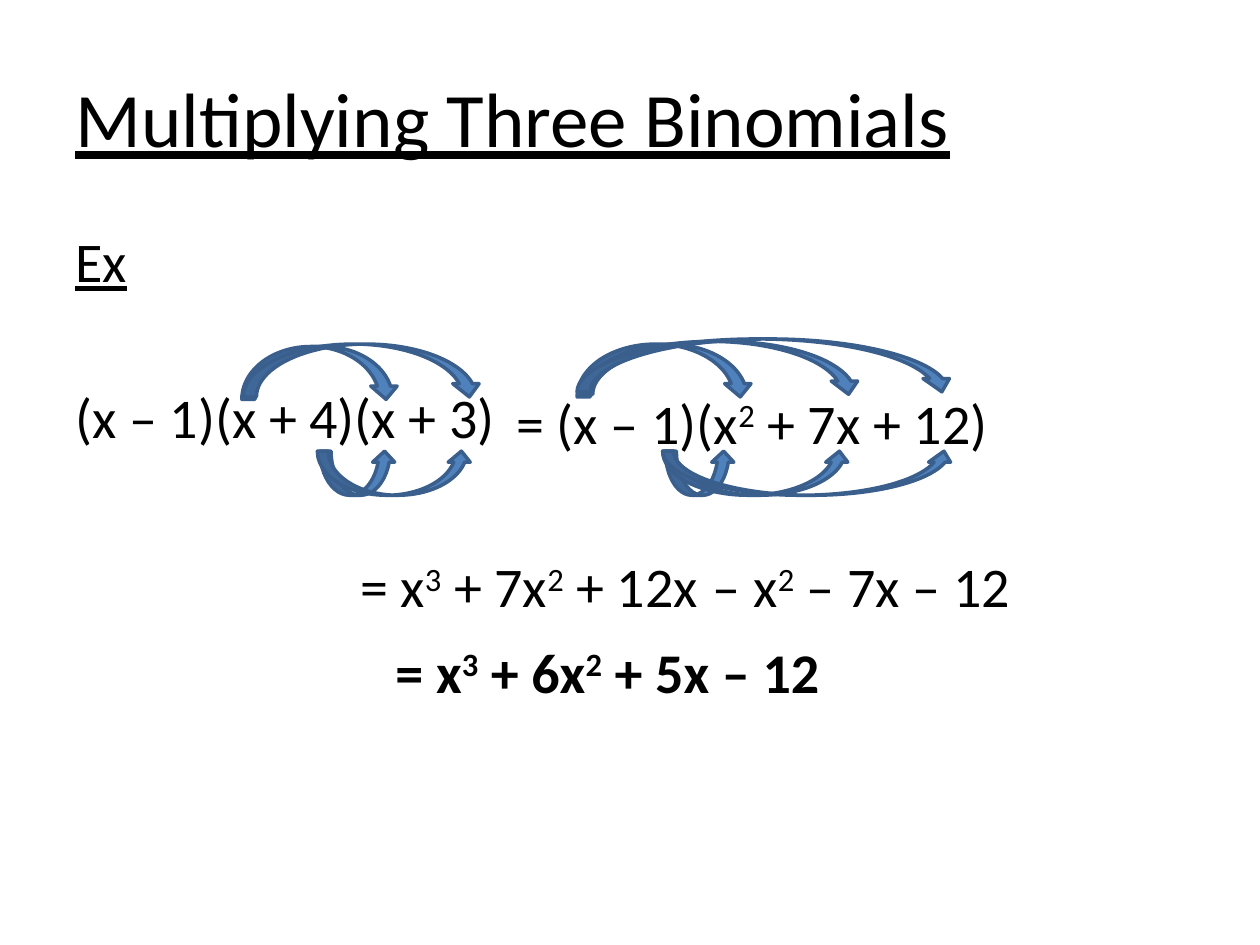
from dataclasses import dataclass

from pptx import Presentation
from pptx.dml.color import RGBColor
from pptx.enum.shapes import MSO_SHAPE
from pptx.enum.text import MSO_ANCHOR, MSO_AUTO_SIZE
from pptx.util import Pt

DOWN, UP = MSO_SHAPE.CURVED_DOWN_ARROW, MSO_SHAPE.CURVED_UP_ARROW
MIDDLE, FIT, FIXED = MSO_ANCHOR.MIDDLE, MSO_AUTO_SIZE.SHAPE_TO_FIT_TEXT, MSO_AUTO_SIZE.NONE


@dataclass(frozen=True)
class Theme:
    font: str = "Calibri"
    title: int = 44
    body: int = 32
    text: RGBColor = RGBColor(0, 0, 0)
    arrow: RGBColor = RGBColor(0x4F, 0x81, 0xBD)
    outline: RGBColor = RGBColor(0x3A, 0x5F, 0x8C)


THEME = Theme()

prs = Presentation()
prs.slide_width, prs.slide_height = Pt(720), Pt(540)
s = prs.slides.add_slide(prs.slide_layouts[6])


def add_box(left, top, width, height, wrap=True):
    tf = s.shapes.add_textbox(Pt(left), Pt(top), Pt(width), Pt(height)).text_frame
    tf.word_wrap = wrap
    tf.auto_size = FIXED if wrap else FIT
    return tf


def write(p, text, size=THEME.body, bold=False, underline=False):
    """Fill a paragraph; text between bars is superscript."""
    p.font.name, p.font.size = THEME.font, Pt(size)
    p.font.bold, p.font.underline = bold, underline
    p.font.color.rgb = THEME.text
    for i, part in enumerate(text.split("|")):
        r = p.add_run()
        r.text = part
        if i % 2:
            r._r.get_or_add_rPr().set("baseline", "30000")


# Title
tf = add_box(36, 21.6, 648, 90)
tf.vertical_anchor = MIDDLE
write(tf.paragraphs[0], "Multiplying Three Binomials", THEME.title, underline=True)

# Example heading and the product to expand
tf = add_box(36, 126, 648, 356.4)
write(tf.paragraphs[0], "Ex", underline=True)
p = tf.add_paragraph()
p.space_before = Pt(50.7)
write(p, "(x – 1)(x + 4)(x + 3)")

# Arrows from each term to the terms it multiplies: left, top, width
DOWN_ARROWS = [(138.2, 198, 90), (139, 196.6, 136.8),
               (329.8, 196.6, 100.8), (331.2, 195.1, 161.3), (329.8, 193.7, 216)]
UP_ARROWS = [(182.9, 257.8, 43.2), (181.4, 257.8, 88.6),
             (380.2, 257.8, 39.6), (378.7, 257.8, 107.3), (378.7, 257.8, 167)]
for kind, height, arrows in ((DOWN, 30.2, DOWN_ARROWS), (UP, 25.2, UP_ARROWS)):
    for left, top, width in arrows:
        sp = s.shapes.add_shape(kind, Pt(left), Pt(top), Pt(width), Pt(height))
        sp.shadow.inherit = False
        sp.fill.solid()
        sp.fill.fore_color.rgb = THEME.arrow
        sp.line.color.rgb = THEME.outline
        sp.line.width = Pt(2)

# Working steps: left, top, width, text, bold
STEPS = [
    (288, 218.2, 288.7, "= (x – 1)(x|2| + 7x + 12)", False),
    (198.7, 311.8, 213.1, "= x|3| + 7x|2| + 12x", False),
    (400.3, 311.8, 202.3, "– x|2| – 7x – 12", False),
    (218.9, 360.7, 270, "= x|3| + 6x|2| + 5x – 12", True),
]
for left, top, width, text, bold in STEPS:
    tf = add_box(left, top, width, 46.1, wrap=False)
    write(tf.paragraphs[0], text, bold=bold)

prs.save("out.pptx")
